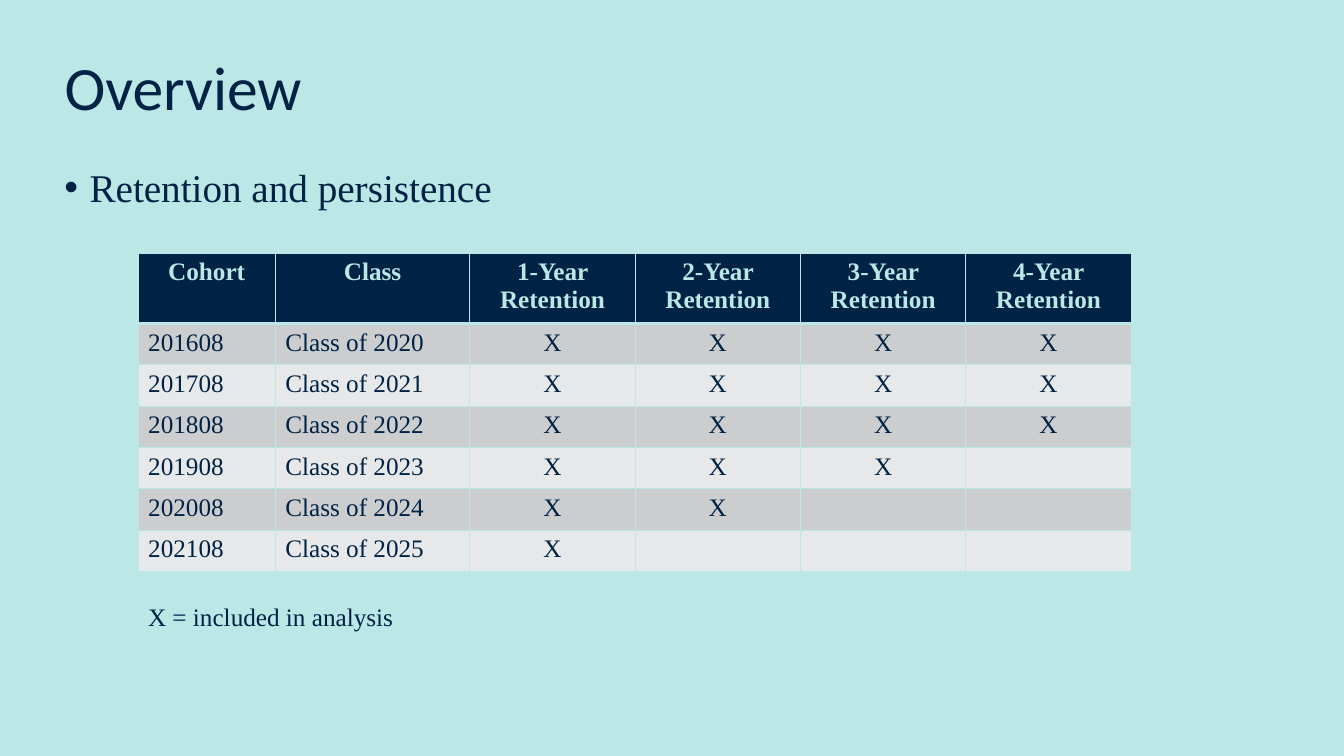
from dataclasses import dataclass

from lxml import etree
from pptx import Presentation
from pptx import util as u
from pptx.dml.color import RGBColor
from pptx.enum import text
from pptx.oxml.ns import qn

WIDTH, HEIGHT = u.Inches(13.33), u.Inches(7.5)


@dataclass(frozen=True)
class Theme:
    mint: str = "BBE7E6"
    navy: str = "002244"
    bands: tuple = ("CCCDCF", "E7E8E9")
    heading_font: str = "Calibri"
    body_font: str = "Times New Roman"
    title_size: int = 44
    bullet_size: int = 28
    table_size: int = 18
    thin: int = 1
    thick: int = 3


THEME = Theme()
MARGIN = 0.54
TABLE_LEFT = 1.37
COLUMN_WIDTHS = [1.36, 1.93] + [1.64] * 4
HEADER_HEIGHT, ROW_HEIGHT = 0.64, 0.41
FIRST_YEAR = 2016
YEARS_INCLUDED = [4, 4, 4, 3, 2, 1]


def style(para, size, font=THEME.body_font, color=THEME.navy, bold=False):
    para.font.size = u.Pt(size)
    para.font.name = font
    para.font.bold = bold
    para.font.color.rgb = RGBColor.from_string(color)


def place(shape, left, top, width, height):
    shape.left, shape.top = u.Inches(left), u.Inches(top)
    shape.width, shape.height = u.Inches(width), u.Inches(height)


def add_title(page, words):
    title = page.shapes.title
    place(title, MARGIN, 0.17, 11.5, 1.45)
    title.text_frame.text = words
    title.text_frame.vertical_anchor = text.MSO_ANCHOR.MIDDLE
    para = title.text_frame.paragraphs[0]
    para.alignment = text.PP_ALIGN.LEFT
    para.line_spacing = 0.9
    style(para, THEME.title_size, THEME.heading_font)


def add_text(page, words, area, size, bullet=False):
    box = page.shapes.add_textbox(*map(u.Inches, area))
    box.text_frame.word_wrap = True
    para = box.text_frame.paragraphs[0]
    para.text = words
    if bullet:
        para.line_spacing = 0.9
        properties = para._p.get_or_add_pPr()
        indent = u.Inches(0.25)
        properties.set("marL", str(indent))
        properties.set("indent", str(-indent))
        etree.SubElement(properties, qn("a:buFont"), typeface="Arial")
        etree.SubElement(properties, qn("a:buChar"), char="•")
    style(para, size)


def set_borders(cell, bottom, top):
    """Draw the four cell edges; they must precede the fill in the XML."""
    properties = cell._tc.get_or_add_tcPr()
    edges = {"lnL": THEME.thin, "lnR": THEME.thin, "lnT": top, "lnB": bottom}
    for position, (edge, points) in enumerate(edges.items()):
        line = etree.Element(qn(f"a:{edge}"), w=str(u.Pt(points)))
        fill = etree.SubElement(line, qn("a:solidFill"))
        etree.SubElement(fill, qn("a:srgbClr"), val=THEME.mint)
        properties.insert(position, line)


def fill_cell(cell, words, row, column):
    header = row == 0
    color = THEME.navy if header else THEME.bands[(row - 1) % 2]
    cell.fill.solid()
    cell.fill.fore_color.rgb = RGBColor.from_string(color)
    set_borders(cell, bottom=THEME.thick if header else THEME.thin,
                top=THEME.thick if row == 1 else THEME.thin)
    para = cell.text_frame.paragraphs[0]
    para.text = words
    if header or column > 1:
        para.alignment = text.PP_ALIGN.CENTER
    style(para, THEME.table_size, color=THEME.mint if header else THEME.navy,
          bold=header)


def cohort_rows():
    rows = [["Cohort", "Class"] + [f"{n}-Year Retention" for n in range(1, 5)]]
    for year, included in enumerate(YEARS_INCLUDED, FIRST_YEAR):
        marks = ["X"] * included + [""] * (4 - included)
        rows.append([f"{year}08", f"Class of {year + 4}"] + marks)
    return rows


def add_cohort_table(page, rows, top):
    heights = [HEADER_HEIGHT] + [ROW_HEIGHT] * (len(rows) - 1)
    area = (TABLE_LEFT, top, sum(COLUMN_WIDTHS), sum(heights))
    table = page.shapes.add_table(len(rows), len(COLUMN_WIDTHS),
                                  *map(u.Inches, area)).table
    for column, width in zip(table.columns, COLUMN_WIDTHS):
        column.width = u.Inches(width)
    for row, height in zip(table.rows, heights):
        row.height = u.Inches(height)
    for r, row in enumerate(rows):
        for c, words in enumerate(row):
            fill_cell(table.cell(r, c), words, r, c)


def main():
    deck = Presentation()
    deck.slide_width, deck.slide_height = WIDTH, HEIGHT
    page = deck.slides.add_slide(deck.slide_layouts[5])
    page.background.fill.solid()
    page.background.fill.fore_color.rgb = RGBColor.from_string(THEME.mint)

    add_title(page, "Overview")
    add_text(page, "Retention and persistence", (MARGIN, 1.62, 11.87, 5.36),
             THEME.bullet_size, bullet=True)
    add_cohort_table(page, cohort_rows(), top=2.51)
    add_text(page, "X = included in analysis", (TABLE_LEFT, 5.92, 5.86, 0.4),
             THEME.table_size)
    deck.save("out.pptx")


if __name__ == "__main__":
    main()
